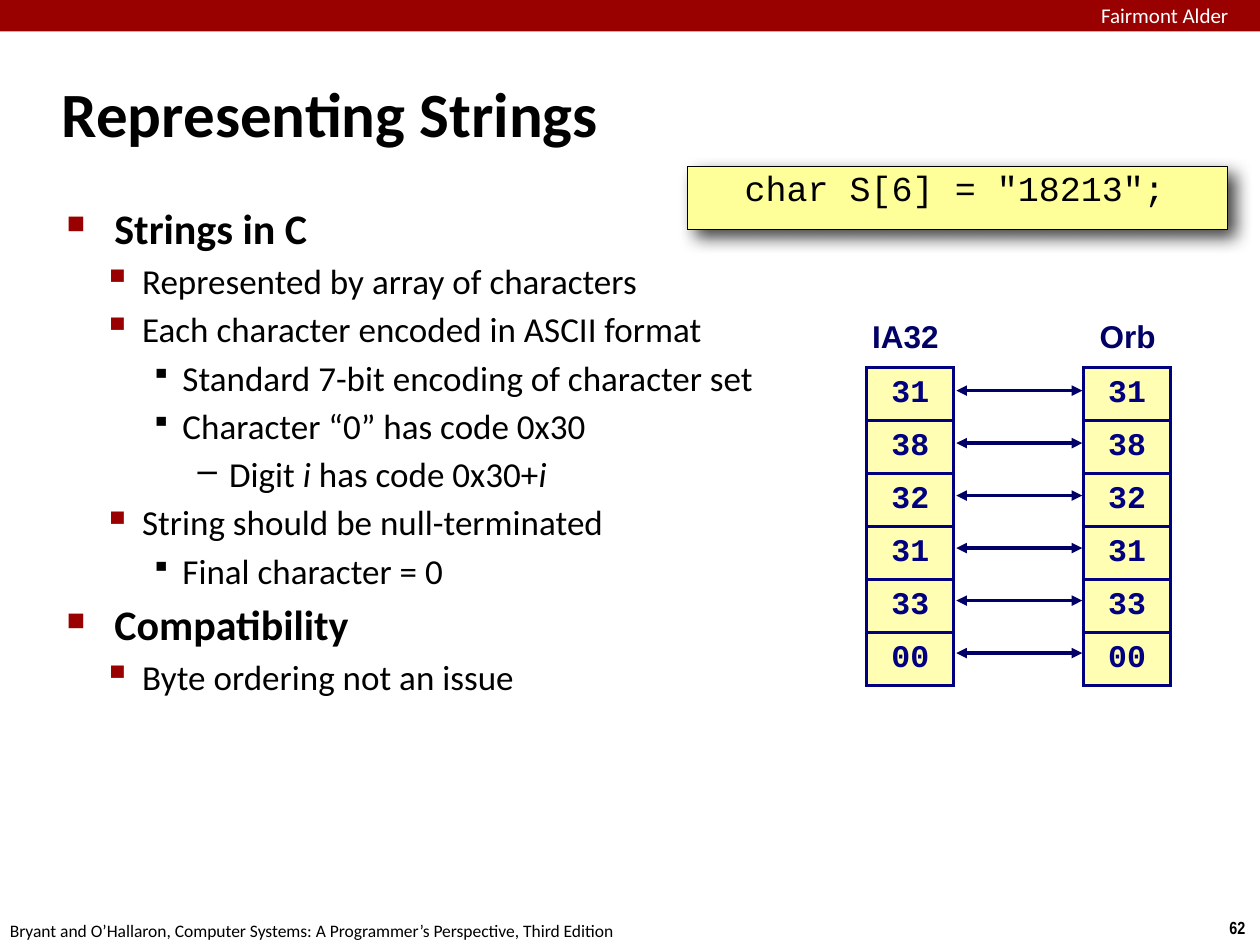
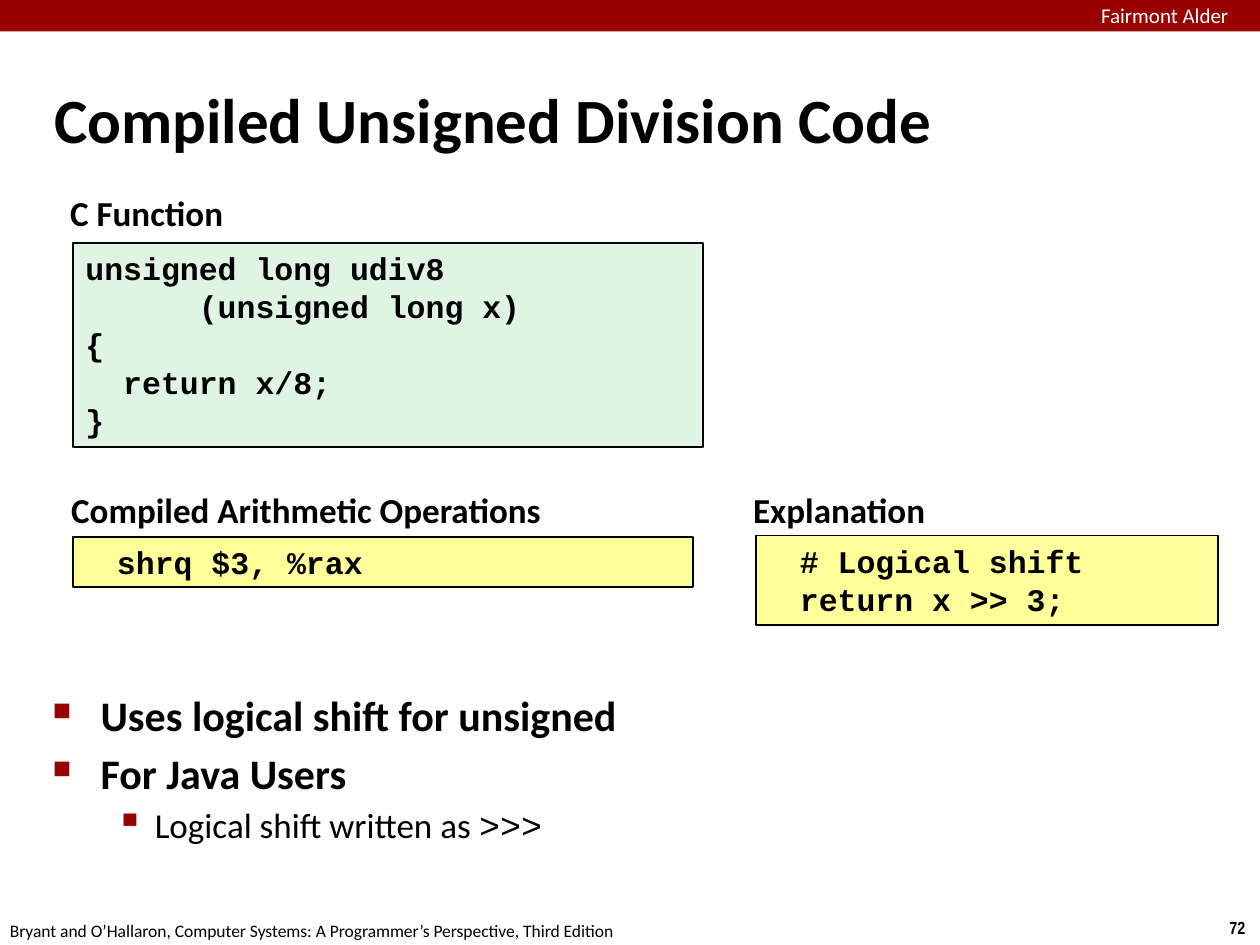
"""Build two lecture slides: string representation and unsigned division code."""
from dataclasses import dataclass

import lxml.etree
import pptx
import pptx.dml.color
import pptx.enum.shapes
import pptx.enum.text
import pptx.oxml.ns
import pptx.util

Inches = pptx.util.Inches
Pt = pptx.util.Pt
qn = pptx.oxml.ns.qn
ALIGN = pptx.enum.text.PP_ALIGN
ANCHOR = pptx.enum.text.MSO_ANCHOR


@dataclass(frozen=True)
class Theme:
    band: str = "990000"
    white: str = "FFFFFF"
    black: str = "000000"
    yellow: str = "FFFF99"
    green: str = "E0F4E3"
    navy: str = "000066"
    border: str = "000080"
    cell: str = "FFFEB2"
    sans: str = "Calibri"
    label: str = "Arial"
    narrow: str = "Arial Narrow"
    mono: str = "Courier New"
    title_pt: int = 36
    heading_pt: int = 24
    body_pt: int = 20
    code_pt: int = 18
    band_pt: int = 12
    footer_pt: int = 10
    space_ratio: float = 0.18


THEME = Theme()


@dataclass(frozen=True)
class Box:
    left: float
    top: float
    width: float
    height: float

    def emu(self) -> tuple:
        return tuple(Inches(v) for v in (self.left, self.top, self.width, self.height))


@dataclass(frozen=True)
class Style:
    size: float
    font: str = THEME.sans
    color: str = THEME.black
    bold: bool = False


@dataclass(frozen=True)
class Label:
    text: str
    box: Box
    style: Style
    align: ALIGN = ALIGN.LEFT
    inset: float | None = None
    wrap: bool = False


@dataclass(frozen=True)
class CodeLine:
    text: str
    indent: float = 0


@dataclass(frozen=True)
class CodeBox:
    lines: tuple[CodeLine, ...]
    box: Box
    fill: str


@dataclass(frozen=True)
class Span:
    text: str
    italic: bool = False
    font: str = THEME.sans


@dataclass(frozen=True)
class Bullet:
    level: int
    spans: tuple[Span, ...]


@dataclass(frozen=True)
class Level:
    margin: float
    hanging: float
    char: str
    percent: int
    color: str


LEVELS = (
    Level(0.38, 0.38, "■", 60, THEME.band),
    Level(0.6, 0.31, "▪", 110, THEME.band),
    Level(0.92, 0.25, "▪", 80, THEME.black),
    Level(1.29, 0.25, "–", 100, THEME.black),
)
CODE = Style(THEME.code_pt, THEME.mono, bold=True)
CAPTION = Style(THEME.body_pt, bold=True)
COLUMN_NAME = Style(THEME.code_pt, THEME.label, THEME.navy, True)


def rgb(color: str) -> pptx.dml.color.RGBColor:
    return pptx.dml.color.RGBColor.from_string(color)


def format_run(r, style: Style) -> None:
    r.font.size = Pt(style.size)
    r.font.name = style.font
    r.font.bold = style.bold
    r.font.color.rgb = rgb(style.color)


def write(p, text: str, style: Style, align: ALIGN = ALIGN.LEFT) -> None:
    p.text = text
    p.alignment = align
    for r in p.runs:
        format_run(r, style)


def paragraph_at(tf, i: int):
    return tf.paragraphs[0] if i == 0 else tf.add_paragraph()


def set_insets(tf, left: float, top: float, right: float, bottom: float) -> None:
    tf.margin_left, tf.margin_top = Inches(left), Inches(top)
    tf.margin_right, tf.margin_bottom = Inches(right), Inches(bottom)


def add_label(s, label: Label) -> None:
    tf = s.shapes.add_textbox(*label.box.emu()).text_frame
    tf.word_wrap = label.wrap
    if label.inset is not None:
        set_insets(tf, *[label.inset] * 4)
    write(tf.paragraphs[0], label.text, label.style, label.align)


def add_rect(s, box: Box, fill: str, line_pt: float = 0):
    sp = s.shapes.add_shape(pptx.enum.shapes.MSO_SHAPE.RECTANGLE, *box.emu())
    sp.shadow.inherit = False
    sp.fill.solid()
    sp.fill.fore_color.rgb = rgb(fill)
    if line_pt:
        sp.line.color.rgb = rgb(THEME.black)
        sp.line.width = Pt(line_pt)
    else:
        sp.line.fill.background()
    sp.text_frame.vertical_anchor = ANCHOR.TOP
    return sp


def add_code(s, code: CodeBox) -> None:
    tf = add_rect(s, code.box, code.fill, 1).text_frame
    for i, line in enumerate(code.lines):
        p = paragraph_at(tf, i)
        write(p, line.text, CODE)
        p._p.get_or_add_pPr().set("marL", str(Inches(line.indent)))


def add_declaration(s, text: str, box: Box) -> None:
    sp = add_rect(s, box, THEME.yellow, 0.5)
    set_insets(sp.text_frame, 0.03, 0.03, 0.07, 0.03)
    p = sp.text_frame.paragraphs[0]
    write(p, text, Style(THEME.body_pt, THEME.mono), ALIGN.CENTER)
    p.line_spacing = 0.95
    effects = sp.element.spPr.find(qn("a:effectLst"))
    shadow = lxml.etree.SubElement(effects, qn("a:outerShdw"), blurRad=str(Pt(10)),
                                   dist=str(Pt(6)), dir="2700000", algn="tl", rotWithShape="0")
    color = lxml.etree.SubElement(shadow, qn("a:srgbClr"), val=THEME.black)
    lxml.etree.SubElement(color, qn("a:alpha"), val="75000")


def add_bullets(s, bullets: tuple[Bullet, ...], box: Box, sub_margin: float = 0.6) -> None:
    tf = s.shapes.add_textbox(*box.emu()).text_frame
    tf.word_wrap = True
    for i, bullet in enumerate(bullets):
        level = LEVELS[bullet.level]
        size = THEME.body_pt if bullet.level else THEME.heading_pt
        p = paragraph_at(tf, i)
        p.level = bullet.level
        p.alignment = ALIGN.LEFT
        p.space_before = Pt(size * THEME.space_ratio)
        for span in bullet.spans:
            r = p.add_run()
            r.text = span.text
            format_run(r, Style(size, span.font, bold=bullet.level == 0))
            r.font.italic = span.italic
        pPr = p._p.get_or_add_pPr()
        pPr.set("marL", str(Inches(sub_margin if bullet.level == 1 else level.margin)))
        pPr.set("indent", str(-Inches(level.hanging)))
        color = lxml.etree.SubElement(pPr, qn("a:buClr"))
        lxml.etree.SubElement(color, qn("a:srgbClr"), val=level.color)
        lxml.etree.SubElement(pPr, qn("a:buSzPct"), val=str(level.percent * 1000))
        lxml.etree.SubElement(pPr, qn("a:buChar"), char=level.char)


def add_byte_column(s, values: tuple[str, ...], box: Box) -> None:
    table = s.shapes.add_table(len(values), 1, *box.emu()).table
    table.first_row = table.horz_banding = False
    for i, value in enumerate(values):
        table.rows[i].height = Inches(box.height / len(values))
        cell = table.cell(i, 0)
        set_insets(cell, *[0.06] * 4)
        cell.vertical_anchor = ANCHOR.MIDDLE
        cell.fill.solid()
        cell.fill.fore_color.rgb = rgb(THEME.cell)
        write(cell.text_frame.paragraphs[0], value,
              Style(THEME.code_pt, THEME.mono, THEME.border, True), ALIGN.CENTER)
        tcPr = cell._tc.get_or_add_tcPr()
        for k, side in enumerate(("lnL", "lnR", "lnT", "lnB")):
            ln = lxml.etree.Element(qn(f"a:{side}"), w=str(Pt(2)))
            fill = lxml.etree.SubElement(ln, qn("a:solidFill"))
            lxml.etree.SubElement(fill, qn("a:srgbClr"), val=THEME.border)
            tcPr.insert(k, ln)


def add_double_arrow(s, x1: float, x2: float, y: float) -> None:
    c = s.shapes.add_connector(pptx.enum.shapes.MSO_CONNECTOR.STRAIGHT,
                               Inches(x1), Inches(y), Inches(x2), Inches(y))
    c.line.color.rgb = rgb(THEME.navy)
    c.line.width = Pt(2)
    ln = c.element.spPr.find(qn("a:ln"))
    for end in ("headEnd", "tailEnd"):
        lxml.etree.SubElement(ln, qn(f"a:{end}"), type="triangle")
    lxml.etree.SubElement(c.element.spPr, qn("a:effectLst"))


def add_slide(prs, title: str, box: Box, number: str):
    s = prs.slides.add_slide(prs.slide_layouts[5])
    sp = s.shapes.title
    sp.left, sp.top, sp.width, sp.height = box.emu()
    tf = sp.text_frame
    tf.vertical_anchor = ANCHOR.MIDDLE
    write(tf.paragraphs[0], title, Style(THEME.title_pt, bold=True))
    add_rect(s, Box(0, 0, 10, 0.25), THEME.band)
    for label in (
        Label("Fairmont Alder", Box(8.64, -0.03, 1.43, 0.3),
              Style(THEME.band_pt, color=THEME.white), wrap=True),
        Label(number, Box(9.66, 7.23, 0.34, 0.27),
              Style(THEME.footer_pt, THEME.narrow, bold=True)),
        Label("Bryant and O’Hallaron, Computer Systems: A Programmer’s Perspective, Third Edition",
              Box(-0.02, 7.25, 5.08, 0.27), Style(THEME.footer_pt)),
    ):
        add_label(s, label)
    return s


def build_strings(prs) -> None:
    s = add_slide(prs, "Representing Strings", Box(0.39, 0.48, 8.3, 0.83), "62")
    add_declaration(s, 'char S[6] = "18213";', Box(5.46, 1.32, 4.28, 0.5))
    add_bullets(s, (
        Bullet(0, (Span("Strings in C"),)),
        Bullet(1, (Span("Represented by array of characters"),)),
        Bullet(1, (Span("Each character encoded in ASCII format"),)),
        Bullet(2, (Span("Standard 7-bit encoding of character set"),)),
        Bullet(2, (Span("Character “0” has code 0x30"),)),
        Bullet(3, (Span("Digit "), Span("i", True), Span(" has code 0x30+"), Span("i", True))),
        Bullet(1, (Span("String should be null-terminated"),)),
        Bullet(2, (Span("Final character = 0"),)),
        Bullet(0, (Span("Compatibility"),)),
        Bullet(1, (Span("Byte ordering not an issue"),)),
    ), Box(0.43, 1.56, 8.64, 5.44))
    values = ("31", "38", "32", "31", "33", "00")
    column_height = 2.5
    for name, left, label_box in (("IA32", 6.88, Box(6.84, 2.46, 0.69, 0.42)),
                                  ("Orb", 8.6, Box(8.63, 2.46, 0.64, 0.42))):
        add_label(s, Label(name, label_box, COLUMN_NAME, ALIGN.CENTER, 0.06))
        add_byte_column(s, values, Box(left, 2.92, 0.69, column_height))
    for i in range(len(values)):
        add_double_arrow(s, 7.59, 8.59, 3.1 + i * column_height / len(values))


def build_division(prs) -> None:
    s = add_slide(prs, "Compiled Unsigned Division Code", Box(0.33, 0.62, 8.67, 0.63), "72")
    for code in (
        CodeBox((CodeLine("unsigned long udiv8"), CodeLine("(unsigned long x)", 0.9),
                 CodeLine("{"), CodeLine("return x/8;", 0.3), CodeLine("}")),
                Box(0.58, 1.93, 5, 1.62), THEME.green),
        CodeBox((CodeLine("shrq $3, %rax", 0.25),), Box(0.58, 4.26, 4.92, 0.4), THEME.yellow),
        CodeBox((CodeLine("# Logical shift", 0.25), CodeLine("return x >> 3;", 0.25)),
                Box(6, 4.25, 3.67, 0.71), THEME.yellow),
    ):
        add_code(s, code)
    for text, box in (("C Function", Box(0.5, 1.47, 1.33, 0.44)),
                      ("Compiled Arithmetic Operations", Box(0.5, 3.83, 3.86, 0.44)),
                      ("Explanation", Box(5.92, 3.83, 1.48, 0.44))):
        add_label(s, Label(text, box, CAPTION, ALIGN.CENTER, 0.05))
    add_bullets(s, (
        Bullet(0, (Span("Uses logical shift for unsigned"),)),
        Bullet(0, (Span("For Java Users"),)),
        Bullet(1, (Span("Logical shift written as "), Span(">>>", font=THEME.mono))),
    ), Box(0.32, 5.42, 9.09, 1.3), sub_margin=0.81)


def main() -> None:
    prs = pptx.Presentation()
    prs.slide_width, prs.slide_height = Inches(10), Inches(7.5)
    build_strings(prs)
    build_division(prs)
    prs.save("out.pptx")


if __name__ == "__main__":
    main()
